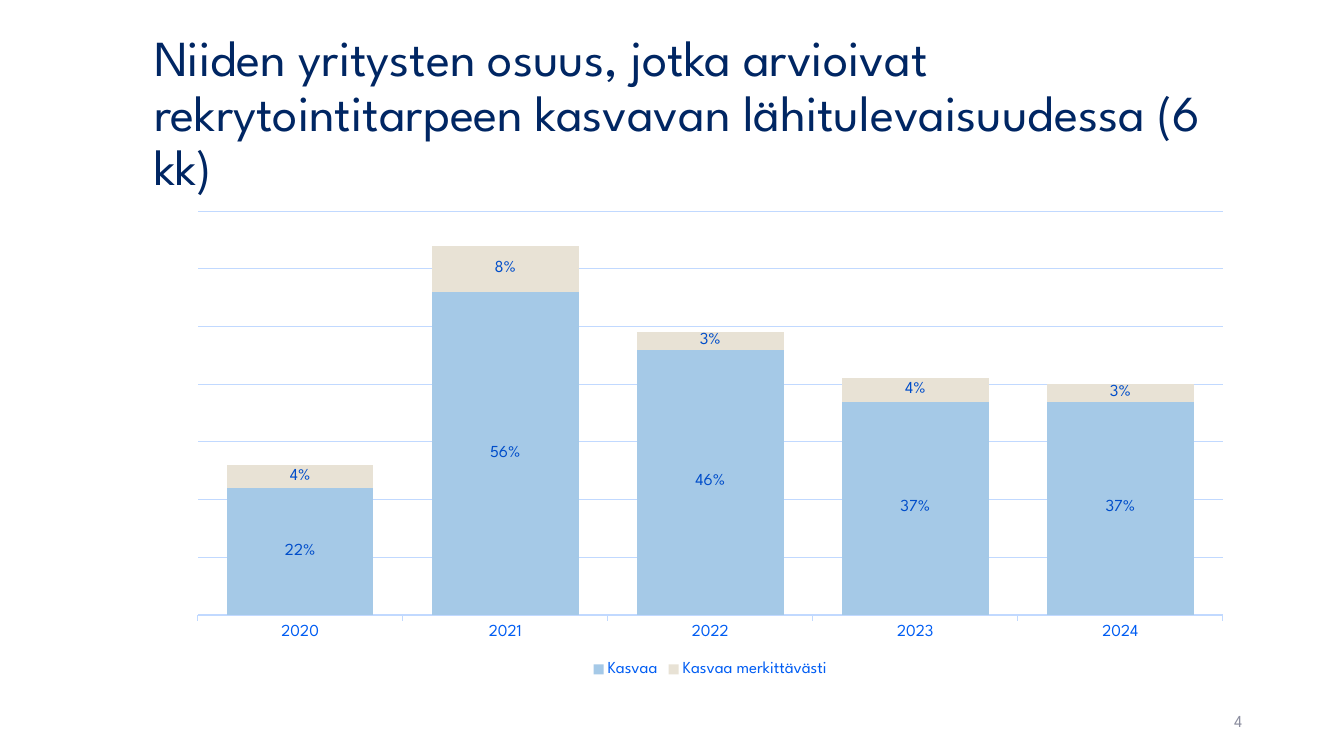
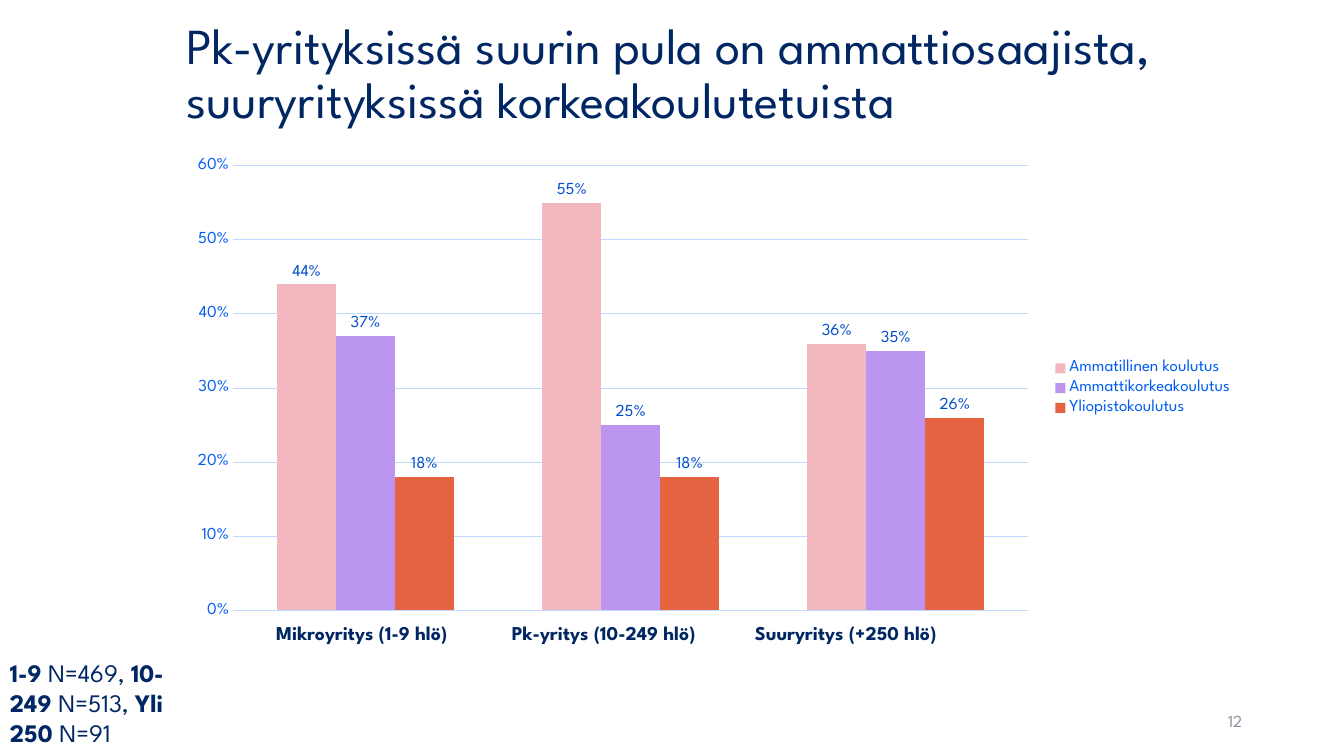
import pptx
import pptx.chart.data
import pptx.dml.color
import pptx.enum.chart
import pptx.enum.text
import pptx.util
from dataclasses import dataclass

Inches = pptx.util.Inches
Pt = pptx.util.Pt
chart_enum = pptx.enum.chart
Align = pptx.enum.text.PP_ALIGN
Anchor = pptx.enum.text.MSO_ANCHOR


@dataclass(frozen=True)
class Theme:
    font: str = "League Spartan"
    navy: str = "002663"
    axis_text: str = "005DF3"
    label_text: str = "004DCA"
    grid: str = "C1D9FF"
    grey: str = "8C8E9F"
    title_size: int = 36
    sample_size: int = 18
    group_size: int = 14
    small_size: int = 12


theme = Theme()


def style_font(font, size, color, bold=False):
    font.name = theme.font
    font.size = Pt(size)
    font.bold = bold
    font.color.rgb = pptx.dml.color.RGBColor.from_string(color)


def add_text(page, area, spans, size, color, align=Align.LEFT, anchor=Anchor.TOP):
    """Add a one-paragraph box; spans are (text, bold) pairs."""
    box = page.shapes.add_textbox(*[Inches(length) for length in area])
    frame = box.text_frame
    frame.word_wrap = True
    frame.vertical_anchor = anchor
    para = frame.paragraphs[0]
    para.alignment = align
    for text, bold in spans:
        span = para.add_run()
        span.text = text
        style_font(span.font, size, color, bold)
    return para


slides = [
    {
        "title": "Niiden yritysten osuus, jotka arvioivat rekrytointitarpeen "
                 "kasvavan lähitulevaisuudessa (6 kk)",
        "title_area": (1.43, 0.43, 10.92, 1.42),
        "number": "4",
        "chart_top": 2,
        "chart_type": chart_enum.XL_CHART_TYPE.COLUMN_STACKED,
        "legend": chart_enum.XL_LEGEND_POSITION.BOTTOM,
        "label_position": chart_enum.XL_LABEL_POSITION.CENTER,
        "gap": 40,
        "overlap": 100,
        "maximum": 0.7,
        "visible_axis": "category",
        "categories": ["2020", "2021", "2022", "2023", "2024"],
        "series": [
            ("Kasvaa", "A5C9E7", [0.22, 0.56, 0.46, 0.37, 0.37]),
            ("Kasvaa merkittävästi", "E8E2D5", [0.04, 0.08, 0.03, 0.04, 0.03]),
        ],
    },
    {
        "title": "Pk-yrityksissä suurin pula on ammattiosaajista, "
                 "suuryrityksissä korkeakoulutetuista",
        "title_area": (1.75, 0.02, 11.25, 1.45),
        "number": "12",
        "chart_top": 1.47,
        "chart_type": chart_enum.XL_CHART_TYPE.COLUMN_CLUSTERED,
        "legend": chart_enum.XL_LEGEND_POSITION.RIGHT,
        "label_position": chart_enum.XL_LABEL_POSITION.OUTSIDE_END,
        "gap": 150,
        "overlap": 0,
        "maximum": 0.6,
        "visible_axis": "value",
        "categories": ["1", "2", "3"],
        "series": [
            ("Ammatillinen koulutus", "F2B7BF", [0.44, 0.55, 0.36]),
            ("Ammattikorkeakoulutus", "BB95EF", [0.37, 0.25, 0.35]),
            ("Yliopistokoulutus", "E66342", [0.18, 0.18, 0.26]),
        ],
    },
]

deck = pptx.Presentation()
deck.slide_width = Inches(13.33)
deck.slide_height = Inches(7.5)
blank = deck.slide_layouts[6]

for content in slides:
    page = deck.slides.add_slide(blank)
    title = add_text(page, content["title_area"], [(content["title"], False)],
                     theme.title_size, theme.navy, anchor=Anchor.MIDDLE)
    title.line_spacing = 0.9

    data = pptx.chart.data.CategoryChartData(number_format="0%")
    data.categories = content["categories"]
    for name, color, values in content["series"]:
        data.add_series(name, values)
    chart = page.shapes.add_chart(
        content["chart_type"], Inches(1.75), Inches(content["chart_top"]),
        Inches(10.59), Inches(4.76), data).chart
    chart.has_title = False
    style_font(chart.font, theme.small_size, theme.navy)

    chart.has_legend = True
    chart.legend.position = content["legend"]
    chart.legend.include_in_layout = False
    style_font(chart.legend.font, theme.small_size, theme.axis_text)

    grid_color = pptx.dml.color.RGBColor.from_string(theme.grid)
    category_axis, value_axis = chart.category_axis, chart.value_axis
    category_axis.visible = content["visible_axis"] == "category"
    value_axis.visible = content["visible_axis"] == "value"
    for axis in (category_axis, value_axis):
        style_font(axis.tick_labels.font, theme.small_size, theme.axis_text)
    category_axis.major_tick_mark = chart_enum.XL_TICK_MARK.OUTSIDE
    value_axis.major_tick_mark = chart_enum.XL_TICK_MARK.NONE
    value_axis.minimum_scale = 0
    value_axis.maximum_scale = content["maximum"]
    value_axis.major_unit = 0.1
    value_axis.tick_labels.number_format = "0%"
    value_axis.tick_labels.number_format_is_linked = False
    value_axis.format.line.fill.background()
    for line in (category_axis.format.line, value_axis.major_gridlines.format.line):
        line.color.rgb = grid_color
        line.width = Pt(0.75)

    plot = chart.plots[0]
    plot.gap_width = content["gap"]
    plot.overlap = content["overlap"]
    plot.vary_by_categories = False
    for series, (name, color, values) in zip(plot.series, content["series"]):
        series.format.fill.solid()
        series.format.fill.fore_color.rgb = pptx.dml.color.RGBColor.from_string(color)
        labels = series.data_labels
        labels.show_value = True
        labels.number_format = "0%"
        labels.number_format_is_linked = False
        labels.position = content["label_position"]
        style_font(labels.font, theme.small_size, theme.label_text)

    add_text(page, (9.42, 6.95, 3, 0.4), [(content["number"], False)],
             theme.small_size, theme.grey, Align.RIGHT, Anchor.MIDDLE)

# Sample sizes and company groups belong to the last slide only.
sample = [("1-9", True), (" N=469, ", False), ("10-249 ", True),
          ("N=513, ", False), ("Yli 250 ", True), ("N=91", False)]
add_text(page, (0, 6.47, 1.91, 1.01), sample, theme.sample_size, theme.navy)

groups = ["Mikroyritys (1-9 hlö)", "Pk-yritys (10-249 hlö)", "Suuryritys (+250 hlö)"]
group_width = 2.4
for index, group in enumerate(groups):
    add_text(page, (2.39 + index * group_width, 6.11, group_width, 0.34),
             [(group, True)], theme.group_size, theme.navy, Align.CENTER)

deck.save("out.pptx")
